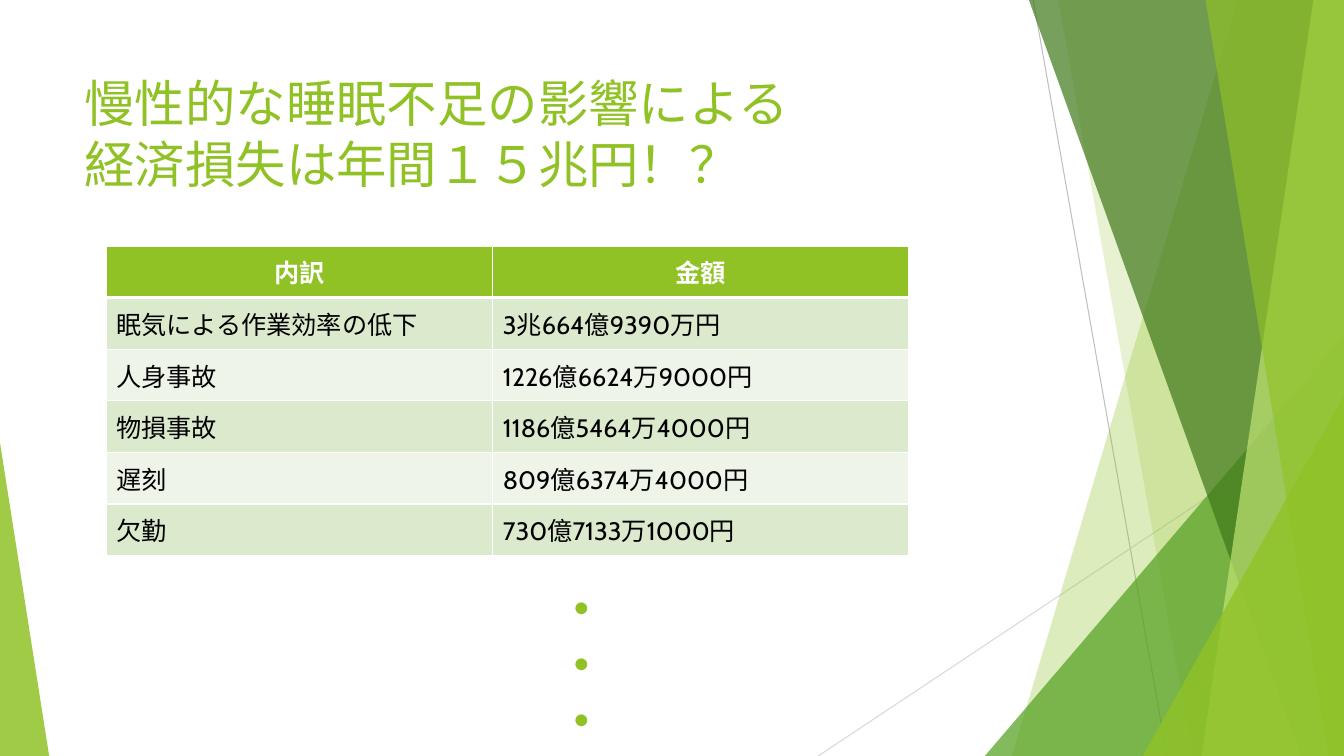
from dataclasses import dataclass

from lxml.etree import SubElement
from pptx import Presentation
from pptx.dml.color import RGBColor
from pptx.enum.shapes import MSO_CONNECTOR, MSO_SHAPE
from pptx.enum.text import MSO_ANCHOR as Anchor, PP_ALIGN as Align
from pptx.oxml.ns import qn
from pptx.util import Cm, Pt

FONT = "Cabin"
GREEN = "90C226"
WHITE = "FFFFFF"
BLACK = "000000"
SLIDE_WIDTH, SLIDE_HEIGHT = 33.87, 19.05
ROW_HEIGHT = 1.3
COLUMN_WIDTHS = (9.75, 10.49)
BAND_COLORS = ("EEF4E8", "DBE9CD")


@dataclass(frozen=True)
class Ray:
    start: tuple[float, float]
    end: tuple[float, float]
    color: str


@dataclass(frozen=True)
class Blade:
    top_left: float
    bottom_left: float
    color: str
    opacity: int


@dataclass(frozen=True)
class Wedge:
    left: float
    top: float
    width: float
    apex: float
    color: str
    opacity: int


@dataclass(frozen=True)
class Loss:
    item: str
    amount: str


RAYS = (
    Ray((26.04, 0), (29.41, SLIDE_HEIGHT), "BFBFBF"),
    Ray((SLIDE_WIDTH, 10.24), (20.62, SLIDE_HEIGHT), "D9D9D9"),
)
FACETS = (
    Blade(31.19, 25.5, GREEN, 30),
    Blade(26.67, 30.05, GREEN, 20),
    Wedge(24.82, 8.46, 9.05, 1, "54A021", 72),
    Blade(25.93, 32.79, "3F7819", 70),
    Blade(33.1, 30.28, "C0E474", 70),
    Blade(30.38, 33.48, GREEN, 65),
    Wedge(28.8, 9.98, 5.07, 1, GREEN, 80),
    Wedge(0, 11.15, 1.24, 0, GREEN, 85),
)
TITLE_LINES = ("慢性的な睡眠不足の影響による", "経済損失は年間１５兆円！？")
LOSSES = (
    Loss("内訳", "金額"),
    Loss("眠気による作業効率の低下", "3兆664億9390万円"),
    Loss("人身事故", "1226億6624万9000円"),
    Loss("物損事故", "1186億5464万4000円"),
    Loss("遅刻", "809億6374万4000円"),
    Loss("欠勤", "730億7133万1000円"),
)


def rgb(code: str) -> RGBColor:
    return RGBColor.from_string(code)


def add_run(paragraph, text: str, size: float, color: str, bold: bool = False) -> None:
    run = paragraph.add_run()
    run.text = text
    run.font.name = FONT
    run.font.size = Pt(size)
    run.font.bold = bold
    run.font.color.rgb = rgb(color)


def add_text_frame(slide, left: float, top: float, width: float, height: float):
    frame = slide.shapes.add_textbox(Cm(left), Cm(top), Cm(width), Cm(height)).text_frame
    frame.word_wrap = True
    frame.vertical_anchor = Anchor.TOP
    return frame


def draw_ray(slide, ray: Ray) -> None:
    ends = [Cm(value) for value in ray.start + ray.end]
    line = slide.shapes.add_connector(MSO_CONNECTOR.STRAIGHT, *ends)
    line.line.color.rgb = rgb(ray.color)
    line.line.width = Pt(0.75)
    SubElement(line._element.spPr, qn("a:effectLst"))


def draw_blade(slide, blade: Blade):
    corners = [
        (Cm(x), Cm(y))
        for x, y in (
            (blade.top_left, 0),
            (SLIDE_WIDTH, 0),
            (SLIDE_WIDTH, SLIDE_HEIGHT),
            (blade.bottom_left, SLIDE_HEIGHT),
        )
    ]
    outline = slide.shapes.build_freeform(*corners[0])
    outline.add_line_segments(corners[1:], close=True)
    return outline.convert_to_shape()


def draw_wedge(slide, wedge: Wedge):
    triangle = slide.shapes.add_shape(
        MSO_SHAPE.ISOSCELES_TRIANGLE,
        Cm(wedge.left), Cm(wedge.top), Cm(wedge.width), Cm(SLIDE_HEIGHT - wedge.top),
    )
    triangle.adjustments[0] = wedge.apex
    return triangle


def draw_facet(slide, facet: Blade | Wedge) -> None:
    draw = draw_blade if isinstance(facet, Blade) else draw_wedge
    shape = draw(slide, facet)
    shape.shadow.inherit = False
    shape.line.fill.background()
    shape.fill.solid()
    shape.fill.fore_color.rgb = rgb(facet.color)
    color = shape._element.spPr.find(qn("a:solidFill"))[0]
    SubElement(color, qn("a:alpha"), val=str(facet.opacity * 1000))


def draw_title(slide) -> None:
    paragraph = add_text_frame(slide, 1.88, 1.7, 23.88, 3.66).paragraphs[0]
    for index, line in enumerate(TITLE_LINES):
        if index:
            paragraph.add_line_break()
        add_run(paragraph, line, 36, GREEN)


def set_borders(cell, row: int) -> None:
    properties = cell._tc.get_or_add_tcPr()
    widths = {"L": 1, "R": 1, "T": 3 if row == 1 else 1, "B": 3 if row == 0 else 1}
    for side, width in widths.items():
        border = SubElement(properties, qn(f"a:ln{side}"), w=str(Pt(width)))
        fill = SubElement(border, qn("a:solidFill"))
        SubElement(fill, qn("a:srgbClr"), val=WHITE)


def fill_cell(cell, row: int, text: str) -> None:
    header = row == 0
    set_borders(cell, row)
    cell.fill.solid()
    cell.fill.fore_color.rgb = rgb(GREEN if header else BAND_COLORS[row % 2])
    cell.vertical_anchor = Anchor.MIDDLE
    paragraph = cell.text_frame.paragraphs[0]
    paragraph.alignment = Align.CENTER if header else Align.LEFT
    add_run(paragraph, text, 18, WHITE if header else BLACK, header)


def draw_losses(slide) -> None:
    table = slide.shapes.add_table(
        len(LOSSES), len(COLUMN_WIDTHS), Cm(2.67), Cm(6.2),
        Cm(sum(COLUMN_WIDTHS)), Cm(ROW_HEIGHT * len(LOSSES)),
    ).table
    for column, width in zip(table.columns, COLUMN_WIDTHS):
        column.width = Cm(width)
    for row, loss in enumerate(LOSSES):
        table.rows[row].height = Cm(ROW_HEIGHT)
        for column, text in enumerate((loss.item, loss.amount)):
            fill_cell(table.cell(row, column), row, text)


def draw_continuation(slide) -> None:
    frame = add_text_frame(slide, 13.82, 14.5, 5.74, 4.06)
    for index in range(3):
        paragraph = frame.add_paragraph() if index else frame.paragraphs[0]
        add_run(paragraph, "・", 33.3, GREEN, True)


def main() -> None:
    deck = Presentation()
    deck.slide_width, deck.slide_height = Cm(SLIDE_WIDTH), Cm(SLIDE_HEIGHT)
    slide = deck.slides.add_slide(deck.slide_layouts[6])
    for ray in RAYS:
        draw_ray(slide, ray)
    for facet in FACETS:
        draw_facet(slide, facet)
    draw_title(slide)
    draw_losses(slide)
    draw_continuation(slide)
    deck.save("out.pptx")


if __name__ == "__main__":
    main()
